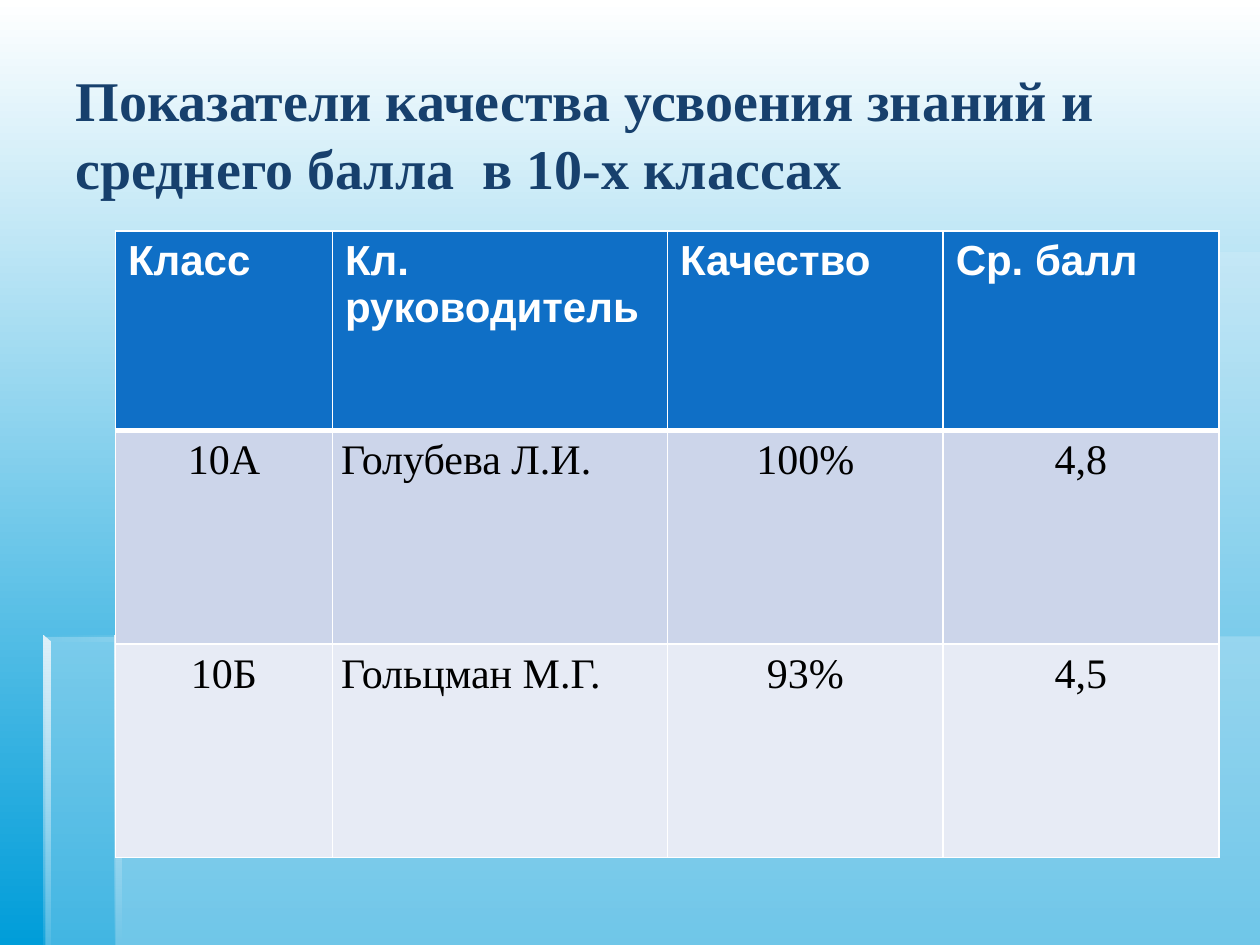
import pptx
import pptx.dml.color
import pptx.enum.text
import pptx.oxml.ns
import pptx.util
from lxml import etree

Pt = pptx.util.Pt
qn = pptx.oxml.ns.qn
ALIGN = pptx.enum.text.PP_ALIGN
ANCHOR = pptx.enum.text.MSO_ANCHOR

COLORS = {
    "white": "FFFFFF", "black": "000000", "sky": "009DD9", "navy": "17406D",
    "header": "0F6FC6", "band1": "CCD5EA", "band2": "E7EBF5",
    "pane": "DBEFF9", "light": "E0F1FA", "shade": "C9DBE4",
}
RIGHT, BOTTOM = 720, 540
RIGHTWARD, DOWNWARD = 0, 270

# Outline in points, (colour, opacity %) stops, gradient direction
PANES = [
    ([(66, 363.6), (66, BOTTOM), (RIGHT, BOTTOM), (RIGHT, 363.6)], [("pane", 30)], None),
    ([(67.5, 364), (26, 364), (26, BOTTOM), (RIGHT, BOTTOM), (RIGHT, 144), (67.5, 144)],
     [("pane", 30)], None),
    ([(66, 144), (66, 147.5), (641.5, 147.5), (641.5, 144)],
     [("pane", 0), ("shade", 100)], RIGHTWARD),
    ([(66, 144), (66, 367), (69.5, 367), (69, 147)],
     [("light", 100), ("pane", 100)], DOWNWARD),
    ([(65.5, BOTTOM), (69.5, BOTTOM), (69, 366), (65.5, 363)],
     [("light", 100), ("pane", 0)], DOWNWARD),
    ([(25, 363), (25, 366.5), (385, 366.5), (385, 363)],
     [("pane", 0), ("shade", 100)], RIGHTWARD),
    ([(25, 363), (25, BOTTOM), (29, BOTTOM), (29, 366.5)],
     [("light", 100), ("pane", 10)], DOWNWARD),
]

TABLE = [
    ["Класс", "Кл. руководитель", "Качество", "Ср. балл"],
    ["10А", "Голубева Л.И.", "100%", "4,8"],
    ["10Б", "Гольцман М.Г.", "93%", "4,5"],
]
COL_WIDTHS = [124, 191.5, 157.5, 157.5]
ROW_HEIGHTS = [114, 122, 122]
ROW_FILLS = ["header", "band1", "band2"]
BODY_ALIGN = [ALIGN.CENTER, ALIGN.JUSTIFY, ALIGN.CENTER, ALIGN.CENTER]
TITLE_FONT = {"name": "Times New Roman", "size": Pt(32), "bold": True}
HEAD_FONT = {"name": "Arial", "size": Pt(24), "bold": True}
BODY_FONT = {"name": "Times New Roman", "size": Pt(24), "bold": False}
BODY_INSETS = {"margin_left": Pt(5), "margin_right": Pt(5),
               "margin_top": 0, "margin_bottom": 0}


def rgb(name):
    return pptx.dml.color.RGBColor.from_string(COLORS[name])


def set_attrs(obj, values):
    for name, value in values.items():
        setattr(obj, name, value)


def solid(fill, color):
    fill.solid()
    fill.fore_color.rgb = rgb(color)


def gradient(fill, colors, angle):
    fill.gradient()
    fill.gradient_angle = angle
    for stop, color, position in zip(fill.gradient_stops, colors, (0, 1)):
        stop.color.rgb = rgb(color)
        stop.position = position


def write(tf, text, font, color, align):
    p = tf.paragraphs[0]
    p.alignment = align
    r = p.add_run()
    r.text = text
    set_attrs(r.font, font)
    r.font.color.rgb = rgb(color)
    return p


def add_pane(slide, points, stops, angle):
    """Draw a translucent, unlined polygon."""
    vertices = [(Pt(x), Pt(y)) for x, y in points]
    builder = slide.shapes.build_freeform(*vertices[0], scale=1.0)
    builder.add_line_segments(vertices[1:], close=True)
    sp = builder.convert_to_shape()
    sp.shadow.inherit = False
    sp.line.fill.background()
    colors = [color for color, _ in stops]
    if angle is None:
        solid(sp.fill, colors[0])
    else:
        gradient(sp.fill, colors, angle)
    for clr, (_, opacity) in zip(sp._element.spPr.iter(qn("a:srgbClr")), stops):
        if opacity < 100:
            etree.SubElement(clr, qn("a:alpha"), val=str(opacity * 1000))


def add_title(slide, text):
    sp = slide.shapes.title
    set_attrs(sp, {"left": Pt(36), "top": Pt(19.5), "width": Pt(660), "height": Pt(113)})
    set_attrs(sp.text_frame, {"word_wrap": True, "vertical_anchor": ANCHOR.MIDDLE,
                              "auto_size": pptx.enum.text.MSO_AUTO_SIZE.NONE})
    write(sp.text_frame, text, TITLE_FONT, "navy", ALIGN.LEFT)
    slide.shapes._spTree.append(sp._element)  # in front of the panes


def set_borders(cell, widths):
    tcPr = cell._tc.get_or_add_tcPr()
    for i, (side, width) in enumerate(widths.items()):
        ln = etree.Element(qn("a:" + side), w=str(Pt(width)))
        fill = etree.SubElement(ln, qn("a:solidFill"))
        etree.SubElement(fill, qn("a:srgbClr"), val=COLORS["white"])
        tcPr.insert(i, ln)


def add_table(slide):
    frame = slide.shapes.add_table(len(TABLE), len(COL_WIDTHS), Pt(66), Pt(132),
                                   Pt(sum(COL_WIDTHS)), Pt(sum(ROW_HEIGHTS)))
    table = frame.table
    for col, width in zip(table.columns, COL_WIDTHS):
        col.width = Pt(width)
    for i, texts in enumerate(TABLE):
        table.rows[i].height = Pt(ROW_HEIGHTS[i])
        for j, text in enumerate(texts):
            cell = table.cell(i, j)
            solid(cell.fill, ROW_FILLS[i])
            set_borders(cell, {"lnL": 1, "lnR": 1, "lnT": 3 if i == 1 else 1,
                               "lnB": 3 if i == 0 else 1})
            if i == 0:
                write(cell.text_frame, text, HEAD_FONT, "white", ALIGN.LEFT)
            else:
                set_attrs(cell, BODY_INSETS)
                p = write(cell.text_frame, text, BODY_FONT, "black", BODY_ALIGN[j])
                p.line_spacing = 1.15


def main():
    prs = pptx.Presentation()
    set_attrs(prs, {"slide_width": Pt(RIGHT), "slide_height": Pt(BOTTOM)})
    slide = prs.slides.add_slide(prs.slide_layouts[5])
    gradient(slide.background.fill, ["white", "sky"], DOWNWARD)
    for pane in PANES:
        add_pane(slide, *pane)
    add_title(slide, "Показатели качества усвоения знаний и среднего балла  в 10-х классах")
    add_table(slide)
    prs.save("out.pptx")


if __name__ == "__main__":
    main()
